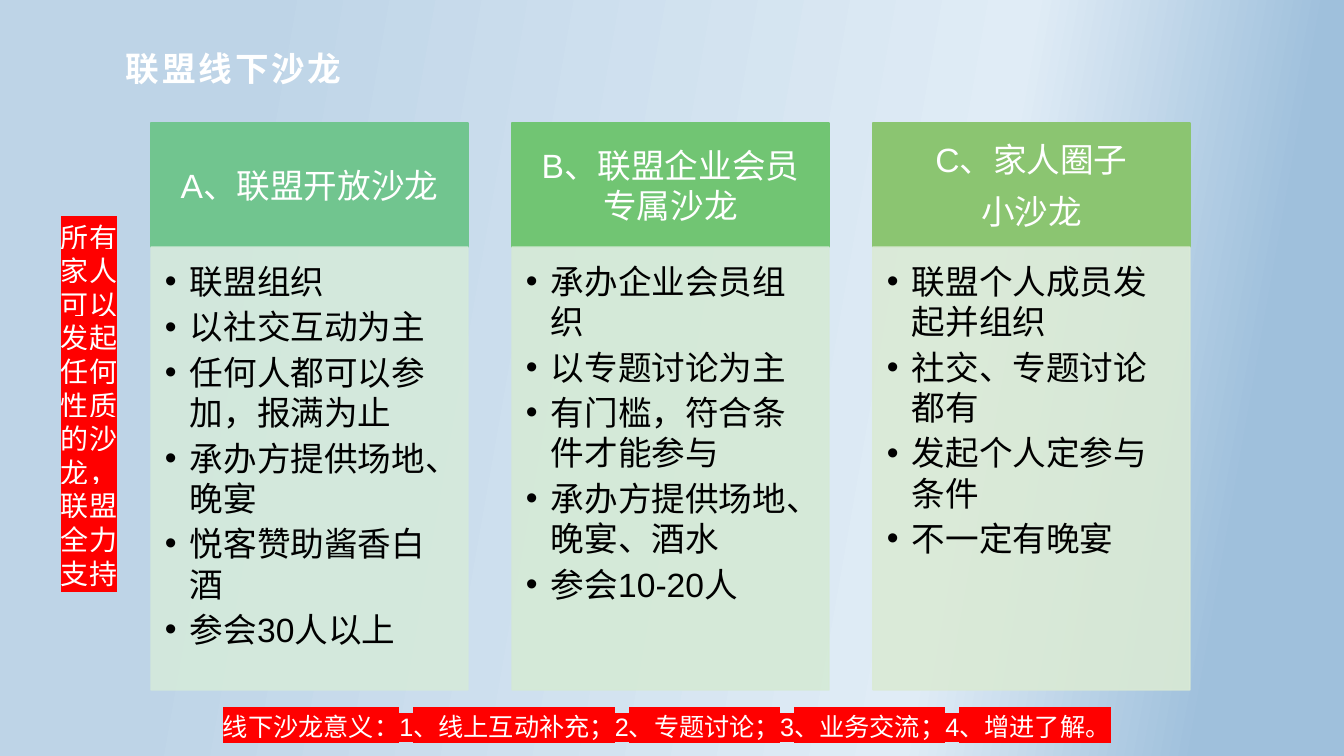
from lxml import etree
from pptx import Presentation
from pptx.dml.color import RGBColor
from pptx.enum.shapes import MSO_SHAPE as SHAPE
from pptx.enum.text import MSO_ANCHOR as ANCHOR, PP_ALIGN as ALIGN
from pptx.oxml import parse_xml
from pptx.oxml.ns import nsdecls, qn
from pptx.util import Emu, Pt

EMU_PER_PX = 914400 / 100.8
FONT = "Arial"
COLORS = {
    "white": "FFFFFF", "black": "000000", "red": "FF0000",
    "sky": "BED4E7", "mist": "E0ECF6", "steel": "9FC0DC",
    "jade": "71C58F", "pale jade": "D5EADB",
    "green": "71C573", "pale green": "D5EAD6",
    "olive": "8BC571", "pale olive": "DAEAD5",
}
GRADIENT_STOPS = [(17, "sky"), (70, "mist"), (90, "steel")]
GRADIENT_ANGLE = 10

COLUMN_LEFT, COLUMN_STEP, COLUMN_WIDTH = 151, 361, 317
HEADER_TOP, HEADER_HEIGHT, BODY_HEIGHT = 123, 124, 443
HEADER_INSETS = (19, 11, 19, 11)
BODY_INSETS = (14, 14, 19, 21)
BULLET_INDENT = 25

# Colour, header lines, bullet items
SALONS = [
    ("jade", ["A、联盟开放沙龙"],
     ["联盟组织", "以社交互动为主", "任何人都可以参加，报满为止",
      "承办方提供场地、晚宴", "悦客赞助酱香白酒", "参会30人以上"]),
    ("green", ["B、联盟企业会员专属沙龙"],
     ["承办企业会员组织", "以专题讨论为主", "有门槛，符合条件才能参与",
      "承办方提供场地、晚宴、酒水", "参会10-20人"]),
    ("olive", ["C、家人圈子", "小沙龙"],
     ["联盟个人成员发起并组织", "社交、专题讨论都有",
      "发起个人定参与条件", "不一定有晚宴"]),
]


def px(length):
    return Emu(round(length * EMU_PER_PX))


def set_background(slide):
    slide.background.fill.gradient()
    gradient = slide._element.find(".//" + qn("a:gradFill"))
    stops = "".join(
        f'<a:gs pos="{position * 1000}"><a:srgbClr val="{COLORS[name]}"/></a:gs>'
        for position, name in GRADIENT_STOPS)
    gradient.getparent().replace(gradient, parse_xml(
        f'<a:gradFill {nsdecls("a")} rotWithShape="1"><a:gsLst>{stops}</a:gsLst>'
        f'<a:lin ang="{GRADIENT_ANGLE * 60000}" scaled="0"/></a:gradFill>'))


def add_bullet(paragraph):
    properties = paragraph._p.get_or_add_pPr()
    properties.set("marL", str(px(BULLET_INDENT)))
    properties.set("indent", str(-px(BULLET_INDENT)))
    etree.SubElement(properties, qn("a:buFont")).set("typeface", FONT)
    etree.SubElement(properties, qn("a:buChar")).set("char", "•")


def add_highlight(run, color):
    highlight = parse_xml(
        f'<a:highlight {nsdecls("a")}><a:srgbClr val="{color}"/></a:highlight>')
    run._r.get_or_add_rPr().find(qn("a:solidFill")).addnext(highlight)


def write_text(shape, lines, *, size=24, color="white", bold=False, spacing=0,
               highlight=None, bullets=False, align=ALIGN.LEFT,
               anchor=ANCHOR.TOP, space_after=0, insets=(10, 5, 10, 5)):
    frame = shape.text_frame
    frame.word_wrap = True
    frame.vertical_anchor = anchor
    (frame.margin_left, frame.margin_top,
     frame.margin_right, frame.margin_bottom) = map(px, insets)
    for index, line in enumerate(lines):
        paragraph = frame.add_paragraph() if index else frame.paragraphs[0]
        paragraph.alignment = align
        paragraph.space_after = Pt(space_after)
        if bullets:
            add_bullet(paragraph)
        run = paragraph.add_run()
        run.text = line
        run.font.size = Pt(size)
        run.font.bold = bold
        run.font.color.rgb = RGBColor.from_string(COLORS[color])
        if highlight:
            add_highlight(run, COLORS[highlight])
        run.font.name = FONT
        if spacing:
            run._r.get_or_add_rPr().set("spc", str(spacing * 100))


def add_label(slide, box, text, **text_format):
    label = slide.shapes.add_textbox(*map(px, box))
    write_text(label, [text], **text_format)


def add_panel(slide, box, panel_color, lines, opacity=100, **text_format):
    panel = slide.shapes.add_shape(SHAPE.RECTANGLE, *map(px, box))
    panel.shadow.inherit = False
    panel.line.width = Pt(1)
    for fill in (panel.fill, panel.line.fill):
        fill.solid()
        fill.fore_color.rgb = RGBColor.from_string(COLORS[panel_color])
    if opacity < 100:
        for color_element in panel._element.spPr.iter(qn("a:srgbClr")):
            alpha = etree.SubElement(color_element, qn("a:alpha"))
            alpha.set("val", str(opacity * 1000))
    write_text(panel, lines, **text_format)


def add_salon(slide, left, color, header, items):
    add_panel(slide, (left, HEADER_TOP, COLUMN_WIDTH, HEADER_HEIGHT),
              color, header, align=ALIGN.CENTER, anchor=ANCHOR.MIDDLE,
              space_after=8.4, insets=HEADER_INSETS)
    add_panel(slide, (left, HEADER_TOP + HEADER_HEIGHT, COLUMN_WIDTH, BODY_HEIGHT),
              f"pale {color}", items, opacity=90, color="black", bullets=True,
              space_after=3.6, insets=BODY_INSETS)


def main():
    presentation = Presentation()
    presentation.slide_width, presentation.slide_height = px(1344), px(756)
    slide = presentation.slides.add_slide(presentation.slide_layouts[6])
    set_background(slide)
    add_label(slide, (116, 43, 375, 48), "联盟线下沙龙", bold=True, spacing=2)
    for index, salon in enumerate(SALONS):
        add_salon(slide, COLUMN_LEFT + index * COLUMN_STEP, *salon)
    add_label(slide, (213, 706, 938, 40),
              "线下沙龙意义：1、线上互动补充；2、专题讨论；3、业务交流；4、增进了解。",
              size=18, highlight="red")
    add_label(slide, (51, 215, 83, 383),
              "所有家人可以发起任何性质的沙龙，联盟全力支持",
              size=20, highlight="red")
    presentation.save("out.pptx")


if __name__ == "__main__":
    main()
